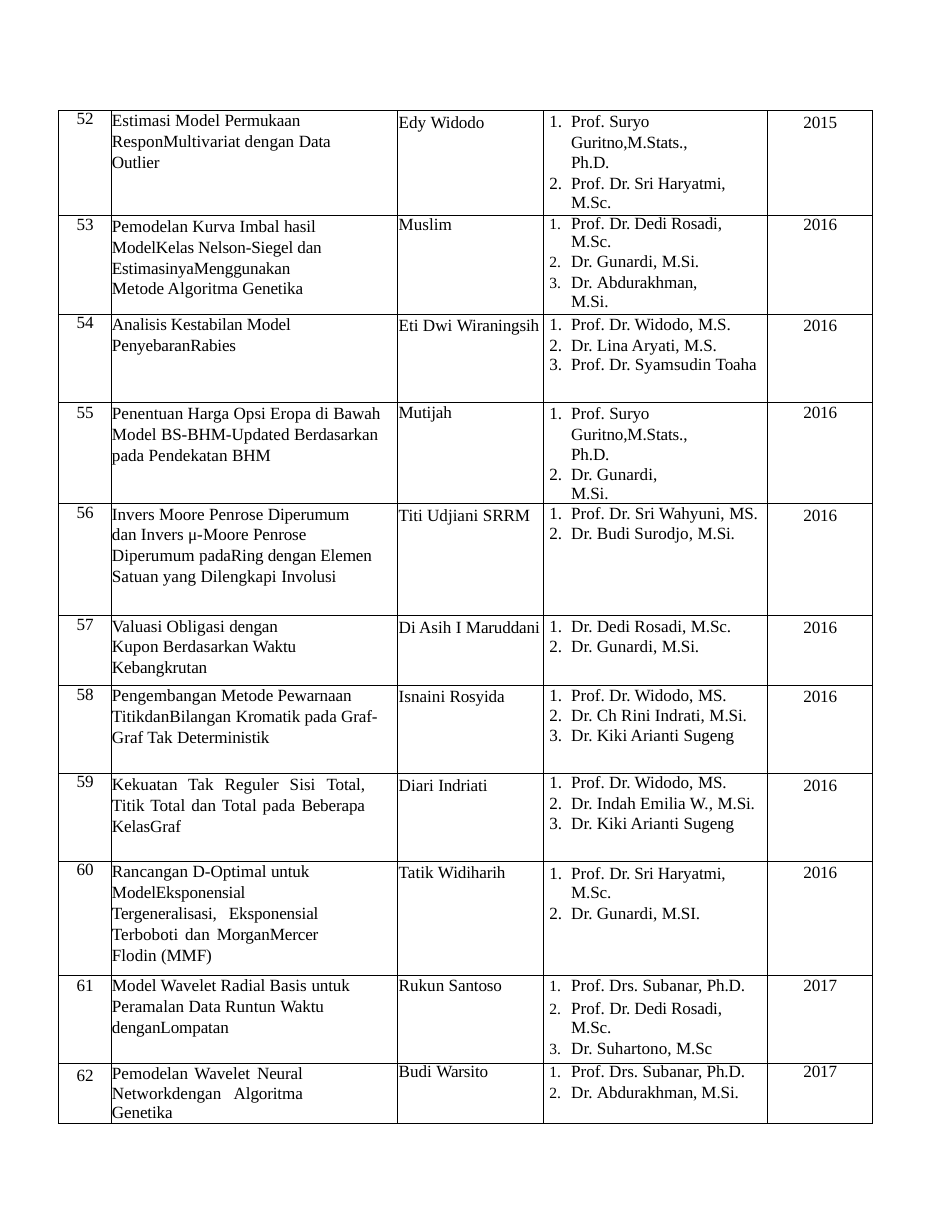
"""Builds one page of a numbered dissertation table."""
from dataclasses import dataclass
from typing import Optional

import pptx
import pptx.dml.color
import pptx.enum.text
import pptx.oxml
import pptx.oxml.ns
import pptx.util

Pt = pptx.util.Pt
ALIGN = pptx.enum.text.PP_ALIGN


@dataclass(frozen=True)
class Theme:
    """Colours, type and table measures, in points."""
    ink: str = "000000"
    font: str = "Times New Roman"
    size: float = 11
    tight: int = -10
    border: float = 0.5
    inset: float = 0.7
    list_indent: float = 18
    list_hang: float = -14
    top: float = 1.5


@dataclass
class Line:
    """One paragraph; text after each | alternates to tighter letter spacing."""
    text: str
    leading: Optional[float] = None
    gap: float = 0
    right: float = 0
    align: ALIGN = ALIGN.LEFT


@dataclass
class Entry:
    """One dissertation: None as a leading means natural leading, set lower."""
    height: float
    number_leading: Optional[float]
    author_leading: Optional[float]
    title: list
    author: str
    supervisors: list
    year: str = "2016"
    bullet_percent: int = 100
    list_top: float = 0


THEME = Theme()
FIRST_NUMBER = 52
COLUMN_WIDTHS = [33.84, 184.32, 93.6, 144, 67.68]
TABLE_LEFT, TABLE_TOP = 37.44, 71.1
LEAD = 12.9
SPREAD = 1.1

ENTRIES = [
    Entry(67.68, 11.6, None,
          [Line("Estimasi Model |Permukaan", LEAD),
           Line("ResponMultivariat dengan |Data Outlier", SPREAD, right=29)],
          "Edy |Widodo",
          [Line("Prof. |Suryo Guritno,M.Stats., Ph.D.", 13.3, right=40),
           Line("Prof. |Dr. Sri Haryatmi, M.Sc.", 12.6, 0.5, 14)], year="2015"),
    Entry(63.36, 11.6, 11.6,
          [Line("Pemodelan Kurva Imbal |hasil", LEAD),
           Line("|ModelKelas Nelson-Siegel dan EstimasinyaMenggunakan", SPREAD, right=37),
           Line("Metode Algoritma| Genetika", SPREAD)],
          "Muslim",
          [Line("Prof. |Dr. Dedi Rosadi, M.Sc.", 11.3, right=14),
           Line("Dr. Gunardi, |M.Si.", gap=0.9),
           Line("Dr. |Abdurakhman, M.Si.", gap=1.2, right=33)], bullet_percent=91),
    Entry(56.88, 11.6, None,
          [Line("|Analisis Kestabilan Model", LEAD), Line("|PenyebaranRabies", SPREAD)],
          "Eti Dwi |Wiraningsih",
          [Line("Prof. Dr. Widodo, |M.S.", 13), Line("Dr. Lina Aryati, |M.S.", gap=0.7),
           Line("Prof. Dr. Syamsudin |Toaha", gap=0.3)]),
    Entry(56.88, 12.5, 12.5,
          [Line("Penentuan Harga Opsi Eropa di |Bawah", LEAD),
           Line("Model |BS-BHM-|Updated |Berdasarkan |pada Pendekatan |BHM", SPREAD)],
          "|Mutijah",
          [Line("Prof. |Suryo Guritno,M.Stats., Ph.D.", 13.2, right=40),
           Line("Dr. Gunardi, |M.Si.", gap=0.7, right=58)]),
    Entry(72, 11.6, None,
          [Line("Invers Moore Penrose |Diperumum", LEAD),
           Line("dan Invers |μ-|Moore |Penrose |Diperumum |padaRing dengan Elemen "
                "|Satuan yang Dilengkapi |Involusi", SPREAD, right=12.5)],
          "Titi Udjiani |SRRM",
          [Line("Prof. Dr. Sri Wahyuni, |MS."), Line("Dr. Budi Surodjo, |M.Si.", gap=1.1)]),
    Entry(44.64, 11.8, None,
          [Line("Valuasi Obligasi |dengan", LEAD),
           Line("Kupon Berdasarkan| Waktu Kebangkrutan", SPREAD, right=37)],
          "Di Asih I |Maruddani",
          [Line("Dr. Dedi Rosadi, |M.Sc.", 13.1), Line("Dr. Gunardi, |M.Si.", gap=0.8)]),
    Entry(56.88, 12.5, None,
          [Line("Pengembangan Metode| Pewarnaan", LEAD),
           Line("TitikdanBilangan |Kromatik |pada |Graf- |Graf Tak |Deterministik", SPREAD)],
          "Isnaini| Rosyida",
          [Line("Prof. Dr. Widodo, |MS.", 13.1), Line("Dr. Ch Rini Indrati, |M.Si.", gap=0.7),
           Line("Dr. Kiki Arianti |Sugeng", gap=0.5)]),
    Entry(56.16, 11.6, None,
          [Line("Kekuatan Tak Reguler Sisi |Total, |Titik Total dan Total pada "
                "|Beberapa KelasGraf", 13.5, right=21, align=ALIGN.JUSTIFY)],
          "Diari |Indriati",
          [Line("Prof. Dr. Widodo, |MS."), Line("Dr. Indah Emilia W., |M.Si.", gap=0.8),
           Line("Dr. Kiki Arianti |Sugeng", gap=0.6)]),
    Entry(73.44, 11.8, None,
          [Line("Rancangan |D-|Optimal |untuk", LEAD), Line("|ModelEksponensial", SPREAD),
           Line("|Tergeneralisasi, Eksponensial |Terboboti dan |MorganMercer |Flodin |(MMF)",
                SPREAD, right=51, align=ALIGN.JUSTIFY)],
          "Tatik |Widiharih",
          [Line("Prof. |Dr. Sri Haryatmi, M.Sc.", 12, right=14),
           Line("Dr. Gunardi, |M.SI.", gap=1.5)], list_top=2.5),
    Entry(56.88, 12.8, 12.8,
          [Line("Model Wavelet Radial Basis |untuk", LEAD),
           Line("Peramalan Data Runtun |Waktu denganLompatan", SPREAD)],
          "Rukun |Santoso",
          [Line("Prof. Drs. Subanar, |Ph.D.", 12.9),
           Line("Prof. |Dr. Dedi Rosadi, M.Sc.", 12.6, 2, 14),
           Line("Dr. Suhartono, |M.Sc", gap=0.8)], year="2017", bullet_percent=91),
    Entry(38.16, None, 11.6,
          [Line("Pemodelan Wavelet |Neural |Networkdengan |Algoritma Genetika",
                12.6, right=61, align=ALIGN.JUSTIFY)],
          "Budi |Warsito",
          [Line("Prof. Drs. Subanar,| Ph.D.", 11.6), Line("Dr. |Abdurakhman, M.Si.", gap=1.1)],
          year="2017", bullet_percent=91),
]


def apply_format(target, formats):
    """Set every named attribute on the target."""
    for name, value in formats.items():
        setattr(target, name, value)


def add_child(parent, xml):
    """Append an element written in the drawing namespace."""
    head, rest = xml.split(" ", 1)
    namespace = pptx.oxml.ns.nsdecls("a")
    parent.append(pptx.oxml.parse_xml(f"{head} {namespace} {rest}"))


def style_cell(cell, top):
    """Give a cell its borders, margins and empty fill."""
    properties = cell._tc.get_or_add_tcPr()
    for side in "LRTB":
        add_child(properties, f'<a:ln{side} w="{Pt(THEME.border)}"><a:solidFill>'
                              f'<a:srgbClr val="{THEME.ink}"/></a:solidFill></a:ln{side}>')
    apply_format(cell, {"margin_left": 0, "margin_right": 0,
                        "margin_top": Pt(top), "margin_bottom": 0})
    cell.fill.background()


def write_line(paragraph, line, bullet_percent):
    """Write one paragraph, numbered when a bullet size is given."""
    properties = paragraph._p.get_or_add_pPr()
    indent, hang = (THEME.list_indent, THEME.list_hang) if bullet_percent else (THEME.inset, 0)
    for name, value in {"marL": indent, "marR": line.right, "indent": hang}.items():
        properties.set(name, str(int(Pt(value))))
    if bullet_percent:
        add_child(properties, f'<a:buSzPct val="{bullet_percent * 1000}"/>')
        add_child(properties, '<a:buAutoNum type="arabicPeriod"/>')
    paragraph.alignment = line.align
    if line.leading:
        paragraph.line_spacing = Pt(line.leading) if line.leading > 5 else line.leading
    if line.gap:
        paragraph.space_before = Pt(line.gap)
    for position, text in enumerate(line.text.split("|")):
        if not text:
            continue
        run = paragraph.add_run()
        run.text = text
        apply_format(run.font, {"name": THEME.font, "size": Pt(THEME.size)})
        run.font.color.rgb = pptx.dml.color.RGBColor.from_string(THEME.ink)
        if position % 2:
            run._r.get_or_add_rPr().set("spc", str(THEME.tight))


def fill_cell(cell, lines, top=0, bullet_percent=None):
    """Style a cell and write its paragraphs."""
    style_cell(cell, top)
    frame = cell.text_frame
    for position, line in enumerate(lines):
        paragraph = frame.add_paragraph() if position else frame.paragraphs[0]
        write_line(paragraph, line, bullet_percent)


def fill_entry(cells, number, entry):
    """Fill the five cells of one dissertation."""
    number_cell, title_cell, author_cell, supervisor_cell, year_cell = cells
    author_top = 0 if entry.author_leading else THEME.top
    fill_cell(number_cell, [Line(f"|{number}", entry.number_leading, align=ALIGN.CENTER)],
              0 if entry.number_leading else THEME.top)
    fill_cell(title_cell, entry.title)
    fill_cell(author_cell, [Line(entry.author, entry.author_leading)], author_top)
    fill_cell(supervisor_cell, entry.supervisors, entry.list_top, entry.bullet_percent)
    fill_cell(year_cell, [Line(f"|{entry.year}", entry.author_leading, align=ALIGN.CENTER)],
              author_top)


def main():
    """Build and save the page."""
    deck = pptx.Presentation()
    apply_format(deck, {"slide_width": Pt(612), "slide_height": Pt(792)})
    page = deck.slides.add_slide(deck.slide_layouts[6])
    table = page.shapes.add_table(
        len(ENTRIES), len(COLUMN_WIDTHS), Pt(TABLE_LEFT), Pt(TABLE_TOP),
        Pt(sum(COLUMN_WIDTHS)), Pt(sum(entry.height for entry in ENTRIES))).table
    apply_format(table, {"first_row": False, "horz_banding": False})
    for column, width in zip(table.columns, COLUMN_WIDTHS):
        column.width = Pt(width)
    for number, (row, entry) in enumerate(zip(table.rows, ENTRIES), FIRST_NUMBER):
        row.height = Pt(entry.height)
        fill_entry(row.cells, number, entry)
    deck.save("out.pptx")


if __name__ == "__main__":
    main()
